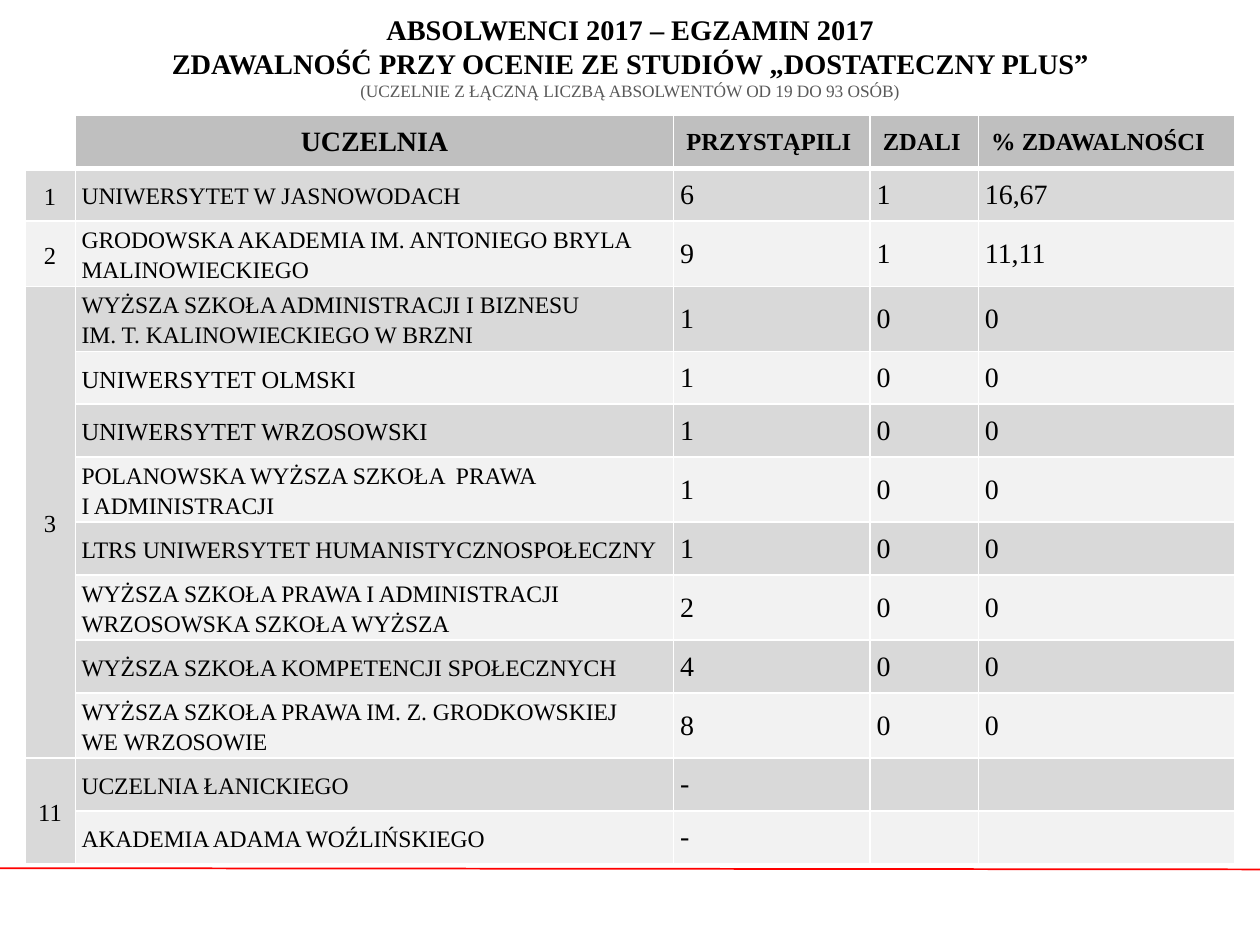
import dataclasses
import lxml.etree
import pptx
import pptx.dml.color
import pptx.enum.shapes
import pptx.enum.text
import pptx.oxml.ns
import pptx.util

Pt = pptx.util.Pt
qn = pptx.oxml.ns.qn
ALIGN = pptx.enum.text.PP_ALIGN
ANCHOR = pptx.enum.text.MSO_ANCHOR


@dataclasses.dataclass(frozen=True)
class Theme:
    font: str = "Times New Roman"
    ink: str = "000000"
    muted: str = "595959"
    white: str = "FFFFFF"
    head: str = "BFBFBF"
    dark: str = "D9D9D9"
    light: str = "F2F2F2"
    red: str = "FF0000"
    title: float = 16.2
    note: float = 9.9
    large: float = 16
    mid: float = 14
    small: float = 13.5


THEME = Theme()
TITLE = ["ABSOLWENCI 2017 – EGZAMIN 2017",
         "ZDAWALNOŚĆ PRZY OCENIE ZE STUDIÓW „DOSTATECZNY PLUS”"]
NOTE = "(UCZELNIE Z ŁĄCZNĄ LICZBĄ ABSOLWENTÓW OD 19 DO 93 OSÓB)"
HEADS = ["UCZELNIA", "PRZYSTĄPILI", "ZDALI", "% ZDAWALNOŚCI"]
COLS = [28.8, 342, 112.3, 61.9, 146.2]
SHORT, TALL = 30.2, 36.4
TALLS = {2, 3, 6, 8, 10}
MIDS = {4, 5}
RANKS = [("1", 1, 1), ("2", 2, 2), ("3", 3, 10), ("11", 11, 12)]
ROWS = [
    (["UNIWERSYTET W JASNOWODACH"], "6", "1", "16,67"),
    (["GRODOWSKA AKADEMIA IM. ANTONIEGO BRYLA MALINOWIECKIEGO"],
     "9", "1", "11,11"),
    (["WYŻSZA SZKOŁA ADMINISTRACJI I BIZNESU",
      "IM. T. KALINOWIECKIEGO W BRZNI"], "1", "0", "0"),
    (["UNIWERSYTET OLMSKI"], "1", "0", "0"),
    (["UNIWERSYTET WRZOSOWSKI"], "1", "0", "0"),
    (["POLANOWSKA WYŻSZA SZKOŁA  PRAWA", "I ADMINISTRACJI"], "1", "0", "0"),
    (["LTRS UNIWERSYTET HUMANISTYCZNOSPOŁECZNY"], "1", "0", "0"),
    (["WYŻSZA SZKOŁA PRAWA I ADMINISTRACJI WRZOSOWSKA SZKOŁA WYŻSZA"],
     "2", "0", "0"),
    (["WYŻSZA SZKOŁA KOMPETENCJI SPOŁECZNYCH"], "4", "0", "0"),
    (["WYŻSZA SZKOŁA PRAWA IM. Z. GRODKOWSKIEJ", "WE WRZOSOWIE"], "8", "0", "0"),
    (["UCZELNIA ŁANICKIEGO"], "-", "", ""),
    (["AKADEMIA ADAMA WOŹLIŃSKIEGO"], "-", "", ""),
]


def color(code):
    return pptx.dml.color.RGBColor.from_string(code)


def add_run(para, text, size, code=THEME.ink, bold=False):
    run = para.add_run()
    run.text = text
    run.font.name = THEME.font
    run.font.size = Pt(size)
    run.font.bold = bold
    run.font.color.rgb = color(code)


def add_title(slide):
    box = slide.shapes.add_textbox(Pt(36), Pt(6.7), Pt(648), Pt(57))
    frame = box.text_frame
    frame.word_wrap = True
    frame.margin_top = frame.margin_bottom = 0
    frame.vertical_anchor = ANCHOR.TOP
    para = frame.paragraphs[0]
    para.alignment = ALIGN.CENTER
    for line in TITLE:
        add_run(para, line, THEME.title, bold=True)
        para.add_line_break()
    add_run(para, NOTE, THEME.note, THEME.muted)


def add_rule(slide):
    line = slide.shapes.add_connector(
        pptx.enum.shapes.MSO_CONNECTOR.STRAIGHT,
        Pt(0), Pt(496.1), Pt(720), Pt(496.8))
    line.line.color.rgb = color(THEME.red)
    line.line.width = Pt(1)
    lxml.etree.SubElement(line._element.spPr, qn("a:effectLst"))


def edge(cell, row):
    props = cell._tc.get_or_add_tcPr()
    for spot, side in enumerate("LRTB"):
        thick = (row, side) in {(0, "B"), (1, "T")}
        line = lxml.etree.Element(qn("a:ln" + side), w=str(Pt(3 if thick else 1)))
        fill = lxml.etree.SubElement(line, qn("a:solidFill"))
        lxml.etree.SubElement(fill, qn("a:srgbClr"), val=THEME.white)
        props.insert(spot, line)


def paint(cell, row, col):
    if row == 0:
        code = THEME.head if col else THEME.white
    elif col == 0:
        code = THEME.light if row == 2 else THEME.dark
    else:
        code = THEME.dark if row % 2 else THEME.light
    cell.fill.solid()
    cell.fill.fore_color.rgb = color(code)
    cell.vertical_anchor = ANCHOR.MIDDLE
    if row:
        cell.margin_left = cell.margin_right = Pt(3.6)
        cell.margin_top = cell.margin_bottom = 0
    edge(cell, row)


def write(cell, lines, size, align=ALIGN.LEFT, space=None, bold=False):
    frame = cell.text_frame
    for spot, line in enumerate(lines):
        para = frame.add_paragraph() if spot else frame.paragraphs[0]
        para.alignment = align
        if space:
            para.line_spacing = space
        add_run(para, line, size, bold=bold)


def add_grid(slide):
    highs = [TALL if row in TALLS else SHORT for row in range(len(ROWS) + 1)]
    grid = slide.shapes.add_table(len(highs), len(COLS), Pt(14.2), Pt(66),
                                  Pt(sum(COLS)), Pt(sum(highs))).table
    grid.first_row = grid.horz_banding = False
    for col, wide in enumerate(COLS):
        grid.columns[col].width = Pt(wide)
    for row, high in enumerate(highs):
        grid.rows[row].height = Pt(high)
        for col in range(len(COLS)):
            paint(grid.cell(row, col), row, col)
    for col, text in enumerate(HEADS, 1):
        first = col == 1
        write(grid.cell(0, col), [text], THEME.large if first else THEME.mid,
              ALIGN.CENTER if first else ALIGN.LEFT, bold=True)
    for row, (name, *vals) in enumerate(ROWS, 1):
        size = THEME.mid if row in MIDS else THEME.small
        write(grid.cell(row, 1), name, size, space=1.15)
        for col, text in enumerate(vals, 2):
            if text:
                write(grid.cell(row, col), [text], THEME.large)
    for text, top, end in RANKS:
        cell = grid.cell(top, 0)
        if end > top:
            cell.merge(grid.cell(end, 0))
        write(cell, [text], THEME.mid, ALIGN.CENTER, 1.15)


def main():
    deck = pptx.Presentation()
    deck.slide_width, deck.slide_height = Pt(720), Pt(540)
    slide = deck.slides.add_slide(deck.slide_layouts[6])
    add_title(slide)
    add_rule(slide)
    add_grid(slide)
    deck.save("out.pptx")


if __name__ == "__main__":
    main()
